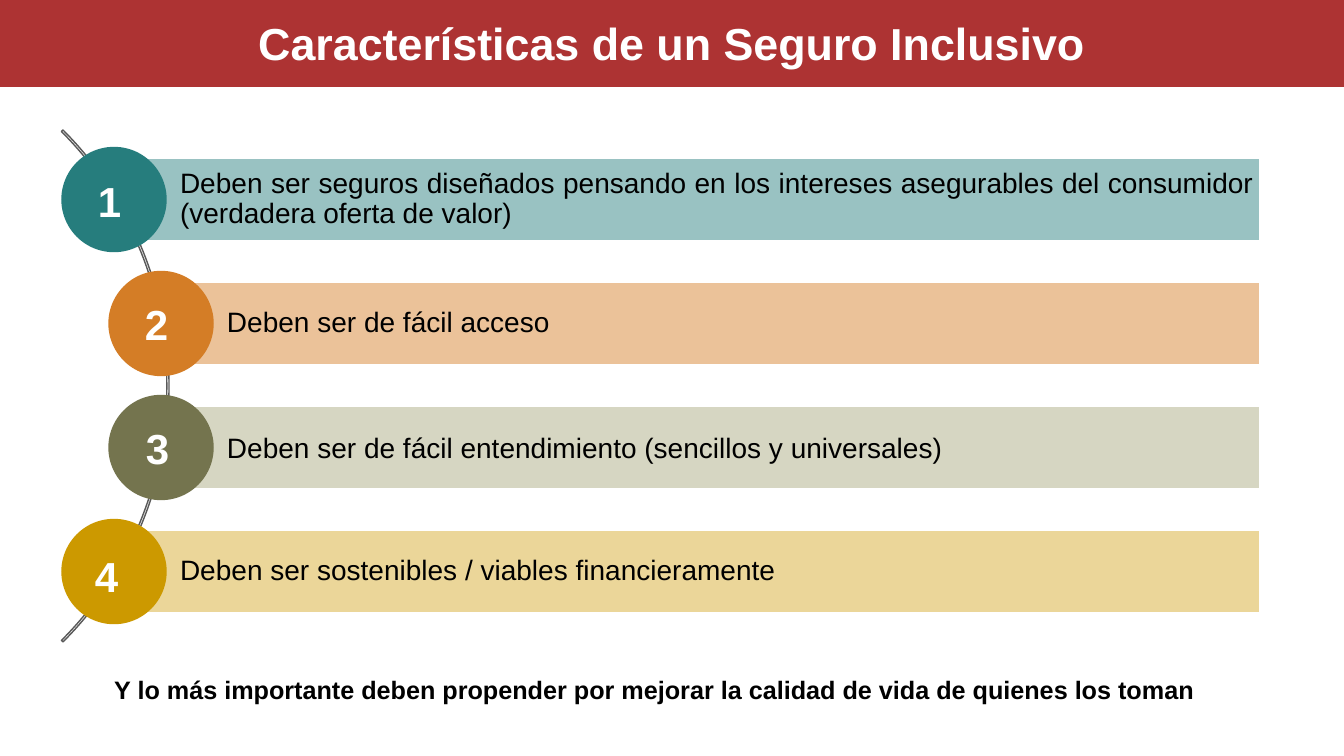
from pptx import Presentation
from pptx.dml.color import RGBColor
from pptx.enum.shapes import MSO_SHAPE
from pptx.enum.text import MSO_ANCHOR, PP_ALIGN
from pptx.util import Pt

WHITE = RGBColor(0xFF, 0xFF, 0xFF)
BLACK = RGBColor(0x00, 0x00, 0x00)
GRAY = RGBColor(0x59, 0x59, 0x59)
RED = RGBColor(0xAD, 0x33, 0x33)
TEAL = RGBColor(0x26, 0x7D, 0x7D)
LIGHT_TEAL = RGBColor(0x99, 0xC2, 0xC2)
ORANGE = RGBColor(0xD4, 0x7D, 0x26)
LIGHT_ORANGE = RGBColor(0xEB, 0xC2, 0x99)
OLIVE = RGBColor(0x74, 0x74, 0x4E)
LIGHT_OLIVE = RGBColor(0xD6, 0xD6, 0xC2)
GOLD = RGBColor(0xCC, 0x99, 0x00)
LIGHT_GOLD = RGBColor(0xEB, 0xD6, 0x99)

PX = 914400 / 100.8


def add_shape(kind, *box, fill=None, line=None):
    sp = s.shapes.add_shape(kind, *[round(v * PX) for v in box])
    sp.shadow.inherit = False
    if fill is None:
        sp.fill.background()
    else:
        sp.fill.solid()
        sp.fill.fore_color.rgb = fill
    if line is None:
        sp.line.fill.background()
    else:
        sp.line.color.rgb = line
        sp.line.width = Pt(1)
    return sp


def add_text(text, sp=None, box=None, size=20, color=BLACK, bold=False,
             align=PP_ALIGN.LEFT, anchor=MSO_ANCHOR.TOP,
             insets=(10, 5, 10, 5), spacing=1.0):
    if sp is None:
        sp = s.shapes.add_textbox(*[round(v * PX) for v in box])
    tf = sp.text_frame
    tf.word_wrap = True
    tf.vertical_anchor = anchor
    tf.margin_left, tf.margin_top, tf.margin_right, tf.margin_bottom = [
        round(v * PX) for v in insets]
    p = tf.paragraphs[0]
    p.alignment = align
    p.line_spacing = spacing
    r = p.add_run()
    r.text = text
    r.font.name = "Arial"
    r.font.size = Pt(size)
    r.font.bold = bold
    r.font.color.rgb = color


prs = Presentation()
prs.slide_width = round(1344 * PX)
prs.slide_height = round(756 * PX)
s = prs.slides.add_slide(prs.slide_layouts[6])

arc = add_shape(MSO_SHAPE.BLOCK_ARC, -555, 24, 724, 724, line=GRAY)
for i, value in enumerate((189, 27, 0.003)):
    arc.adjustments[i] = value

BAR_TOP, BAR_STEP, BAR_HEIGHT, BAR_RIGHT = 158, 124, 83, 1260
CIRCLE = 104

features = [
    ("Deben ser seguros diseñados pensando en los intereses asegurables "
     "del consumidor (verdadera oferta de valor)",
     114, TEAL, LIGHT_TEAL, 0.9, (88, 171)),
    ("Deben ser de fácil acceso",
     161, ORANGE, LIGHT_ORANGE, 0.9, (135, 294)),
    ("Deben ser de fácil entendimiento (sencillos y universales)",
     161, OLIVE, LIGHT_OLIVE, 1.0, (136, 418)),
    ("Deben ser sostenibles / viables financieramente",
     114, GOLD, LIGHT_GOLD, 0.9, (85, 546)),
]

for i, (text, left, dark, light, spacing, number_at) in enumerate(features):
    top = BAR_TOP + i * BAR_STEP
    bar = add_shape(MSO_SHAPE.RECTANGLE, left, top, BAR_RIGHT - left,
                    BAR_HEIGHT, fill=light, line=WHITE)
    add_text(text, bar, align=PP_ALIGN.JUSTIFY, anchor=MSO_ANCHOR.MIDDLE,
             insets=(66, 6, 6, 6), spacing=spacing)
    add_shape(MSO_SHAPE.OVAL, left - CIRCLE / 2,
              top + (BAR_HEIGHT - CIRCLE) / 2, CIRCLE, CIRCLE,
              fill=dark, line=dark)
    add_text(str(i + 1), box=(*number_at, 47, 61), size=30, color=WHITE,
             bold=True)

add_text("Y lo más importante deben propender por mejorar la calidad de vida "
         "de quienes los toman", box=(89, 669, 1131, 40), size=18, bold=True,
         align=PP_ALIGN.CENTER)

banner = add_shape(MSO_SHAPE.RECTANGLE, 0, -1, 1344, 88, fill=RED)
add_text("Características de un Seguro Inclusivo", banner, size=32,
         color=WHITE, bold=True, align=PP_ALIGN.CENTER,
         anchor=MSO_ANCHOR.MIDDLE)

prs.save("out.pptx")
